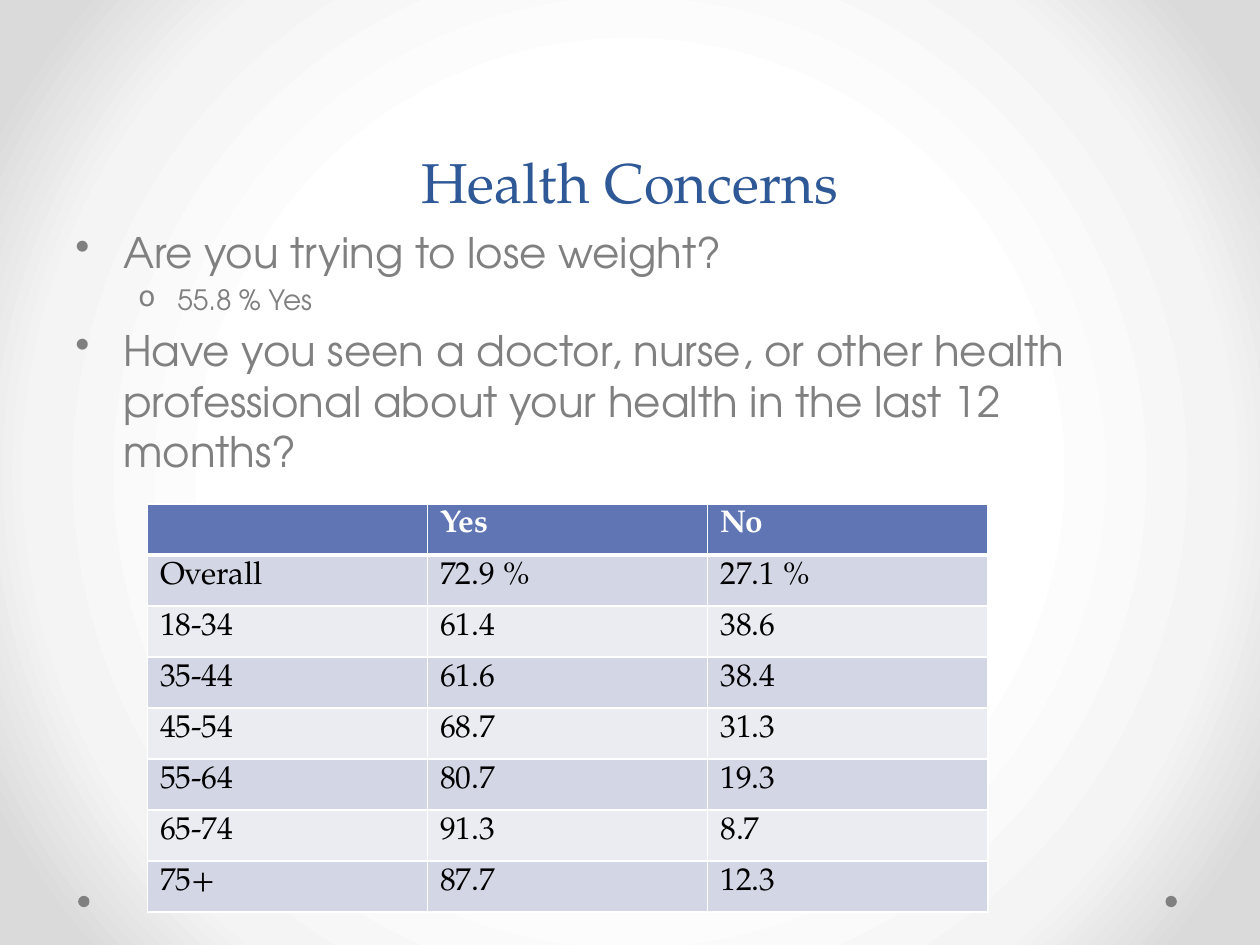
"""Build the Health Concerns survey slide."""
from dataclasses import dataclass

from lxml.etree import SubElement
from pptx import Presentation
from pptx.dml.color import RGBColor
from pptx.enum.shapes import MSO_SHAPE
from pptx.enum.text import MSO_ANCHOR, PP_ALIGN
from pptx.oxml import parse_xml
from pptx.oxml.ns import nsdecls, qn
from pptx.slide import Slide
from pptx.table import _Cell
from pptx.text.text import TextFrame
from pptx.util import Inches, Pt

COLORS = {
    "title": "2F5897", "gray": "808080", "header": "6076B4", "dark band": "D2D6E5",
    "light band": "EAECF2", "white": "FFFFFF", "black": "000000",
}
BACKGROUND_STOPS = {50: "FFFFFF", 76: "F4F4F4", 92: "DADADA"}
SERIF = "TeX Gyre Pagella"
SANS = "TeX Gyre Adventor"


@dataclass
class Bullet:
    """A bulleted line, with its indents in inches and size in points."""
    text: str
    level: int = 0
    character: str = "•"
    size: int = 24
    margin: float = 0.38
    hanging: float = 0.38


BULLETS = [
    Bullet("Are you trying to lose weight?"),
    Bullet("55.8 % Yes", 1, "o", 16, 0.81, 0.31),
    Bullet("Have you seen a doctor, nurse, or other health professional "
           "about your health in the last 12 months?"),
]
ROWS = [
    ("", "Yes", "No"),
    ("Overall", "72.9 %", "27.1 %"),
    ("18-34", "61.4", "38.6"),
    ("35-44", "61.6", "38.4"),
    ("45-54", "68.7", "31.3"),
    ("55-64", "80.7", "19.3"),
    ("65-74", "91.3", "8.7"),
    ("75+", "87.7", "12.3"),
]


def color(name: str) -> RGBColor:
    """Return a named colour."""
    return RGBColor.from_string(COLORS[name])


def set_background(slide: Slide) -> None:
    """Fill the background with a circular gradient."""
    slide.background.fill.gradient()
    gradient = slide.background._cSld.find(".//" + qn("a:gradFill"))
    stops = "".join(
        f'<a:gs pos="{position * 1000}"><a:srgbClr val="{value}"/></a:gs>'
        for position, value in BACKGROUND_STOPS.items()
    )
    gradient.getparent().replace(gradient, parse_xml(
        f'<a:gradFill {nsdecls("a")} rotWithShape="1"><a:gsLst>{stops}</a:gsLst>'
        '<a:path path="circle"><a:fillToRect l="50000" t="50000" r="50000" b="50000"/>'
        '</a:path></a:gradFill>'
    ))


def add_dot(slide: Slide, left: float) -> None:
    """Draw a small footer dot."""
    dot = slide.shapes.add_shape(
        MSO_SHAPE.OVAL, Inches(left), Inches(7.11), Inches(0.09), Inches(0.09))
    dot.shadow.inherit = False
    dot.fill.solid()
    dot.fill.fore_color.rgb = color("gray")
    dot.line.fill.background()


def add_text_area(slide: Slide, top: float, height: float) -> TextFrame:
    """Add a wrapping text box across the slide."""
    box = slide.shapes.add_textbox(Inches(0.5), Inches(top), Inches(9), Inches(height))
    box.text_frame.word_wrap = True
    return box.text_frame


def add_title(slide: Slide, text: str) -> None:
    """Add the centred title."""
    frame = add_text_area(slide, 0, 1.75)
    frame.vertical_anchor = MSO_ANCHOR.BOTTOM
    paragraph = frame.paragraphs[0]
    paragraph.text = text
    paragraph.alignment = PP_ALIGN.CENTER
    paragraph.line_spacing = Pt(58)
    paragraph.font.size = Pt(32)
    paragraph.font.name = SERIF
    paragraph.font.color.rgb = color("title")


def add_bullets(slide: Slide, bullets: list[Bullet]) -> None:
    """Add the survey questions as a bulleted list."""
    frame = add_text_area(slide, 1.75, 4.95)
    for index, bullet in enumerate(bullets):
        paragraph = frame.add_paragraph() if index else frame.paragraphs[0]
        paragraph.text = bullet.text
        paragraph.level = bullet.level
        paragraph.space_before = Pt(bullet.size * 0.2)
        properties = paragraph._p.get_or_add_pPr()
        properties.set("marL", str(Inches(bullet.margin)))
        properties.set("indent", str(-Inches(bullet.hanging)))
        SubElement(properties, qn("a:buChar"), char=bullet.character)
        paragraph.font.size = Pt(bullet.size)
        paragraph.font.name = SANS
        paragraph.font.color.rgb = color("gray")


def set_borders(cell: _Cell, widths: dict[str, int]) -> None:
    """Give the cell white borders of the given widths."""
    properties = cell._tc.get_or_add_tcPr()
    for side, width in widths.items():
        line = SubElement(properties, qn(f"a:ln{side}"), w=str(Pt(width)))
        fill = SubElement(line, qn("a:solidFill"))
        SubElement(fill, qn("a:srgbClr"), val=COLORS["white"])


def add_results(slide: Slide, rows: list[tuple[str, ...]]) -> None:
    """Add the banded table of answers by age."""
    table = slide.shapes.add_table(
        len(rows), len(rows[0]), Inches(1.17), Inches(4), Inches(6.67), Inches(3.24)).table
    for row_index, values in enumerate(rows):
        is_header = row_index == 0
        band = "header" if is_header else "dark band" if row_index % 2 else "light band"
        widths = {"L": 1, "R": 1, "T": 3 if row_index == 1 else 1, "B": 3 if is_header else 1}
        for column_index, value in enumerate(values):
            cell = table.cell(row_index, column_index)
            set_borders(cell, widths)
            cell.fill.solid()
            cell.fill.fore_color.rgb = color(band)
            paragraph = cell.text_frame.paragraphs[0]
            paragraph.text = value
            paragraph.font.size = Pt(18)
            paragraph.font.name = SERIF
            paragraph.font.bold = is_header
            paragraph.font.color.rgb = color("white" if is_header else "black")


def main() -> None:
    """Create and save the presentation."""
    presentation = Presentation()
    presentation.slide_width = Inches(10)
    presentation.slide_height = Inches(7.5)
    slide = presentation.slides.add_slide(presentation.slide_layouts[6])
    set_background(slide)
    for left in (9.25, 0.62):
        add_dot(slide, left)
    add_title(slide, "Health Concerns")
    add_bullets(slide, BULLETS)
    add_results(slide, ROWS)
    presentation.save("out.pptx")


if __name__ == "__main__":
    main()
